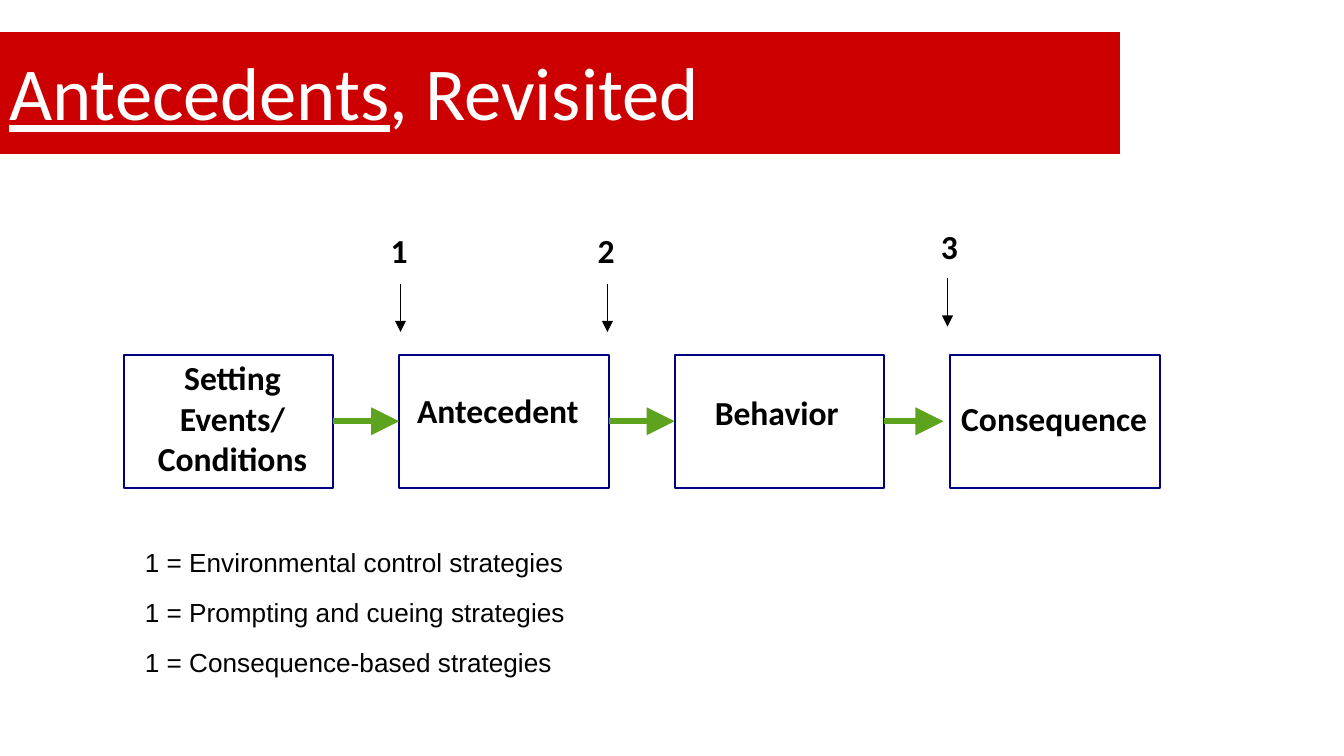
from pptx import Presentation
from pptx.dml.color import RGBColor
from pptx.enum.shapes import MSO_CONNECTOR, MSO_SHAPE
from pptx.enum.text import MSO_ANCHOR, PP_ALIGN
from pptx.oxml.ns import qn
from pptx.util import Inches, Pt
from lxml import etree

RECTANGLE = MSO_SHAPE.RECTANGLE
STRAIGHT = MSO_CONNECTOR.STRAIGHT
CENTER = PP_ALIGN.CENTER
LEFT = PP_ALIGN.LEFT
MIDDLE = MSO_ANCHOR.MIDDLE
RIGHT_SIDE, LEFT_SIDE = 3, 1


def color(value):
    return RGBColor.from_string(value)


def add_text(position, paragraphs, font_format, text_color="000000", align=LEFT):
    """Add a text box; each paragraph is a list of (text, underline) runs."""
    box = slide.shapes.add_textbox(*[Inches(value) for value in position])
    frame = box.text_frame
    frame.word_wrap = True
    for index, runs in enumerate(paragraphs):
        paragraph = frame.paragraphs[0] if index == 0 else frame.add_paragraph()
        paragraph.alignment = align
        for text, underline in runs:
            run = paragraph.add_run()
            run.text = text
            for name, value in font_format.items():
                setattr(run.font, name, value)
            run.font.underline = underline
            run.font.color.rgb = color(text_color)
    return box


# Widescreen slide, 16:9
presentation = Presentation()
presentation.slide_width = Inches(10)
presentation.slide_height = Inches(10 * 9 / 16)
slide = presentation.slides.add_slide(presentation.slide_layouts[6])

title_format = {"name": "Calibri", "size": Pt(40)}
label_format = {"name": "Calibri", "size": Pt(18), "bold": True}
legend_format = {"name": "Arial", "size": Pt(14)}

# Title band
band = slide.shapes.add_shape(
    RECTANGLE, Inches(-0.08), Inches(0.23), Inches(8.42), Inches(0.92))
band.shadow.inherit = False
band.fill.solid()
band.fill.fore_color.rgb = color("CC0000")
band.line.color.rgb = color("FFFFFF")
band.line.width = Pt(0.75)
title = add_text((-0.03, 0.27, 8.73, 0.81),
                 [[("Antecedents", True), (", Revisited", False)]],
                 title_format, "FFFFFF")
title.text_frame.vertical_anchor = MIDDLE

# Chain of boxes, evenly spaced, with their labels
box_left, box_top, box_width, box_height, box_step = 0.92, 2.64, 1.56, 0.99, 2.05
box_middle = box_top + box_height / 2
labels = [
    (["Setting Events/", "Conditions"], (0.98, 2.61, 1.5, 1)),
    (["Antecedent"], (2.87, 2.85, 1.67, 0.77)),
    (["Behavior"], (5.03, 2.87, 1.5, 0.77)),
    (["Consequence"], (6.93, 2.91, 1.83, 0.77)),
]
boxes = []
for index, (lines, position) in enumerate(labels):
    box = slide.shapes.add_shape(
        RECTANGLE, Inches(box_left + index * box_step), Inches(box_top),
        Inches(box_width), Inches(box_height))
    box.shadow.inherit = False
    box.fill.background()
    box.line.color.rgb = color("000080")
    box.line.width = Pt(1)
    boxes.append(box)
    add_text(position, [[(line, False)] for line in lines], label_format,
             align=CENTER)

# Green arrows between boxes; the last stops just short of its box
arrows = []
for index in range(len(boxes) - 1):
    arrow = slide.shapes.add_connector(
        STRAIGHT, Inches(0), Inches(box_middle), Inches(7.02), Inches(box_middle))
    arrow.begin_connect(boxes[index], RIGHT_SIDE)
    if index < 2:
        arrow.end_connect(boxes[index + 1], LEFT_SIDE)
    arrows.append((arrow, "5DA31E", 3, "lg"))

# Numbered markers with black arrows pointing down
markers = [
    ("1", (2.72, 1.66, 0.5, 0.44), 2.98, 2.11),
    ("2", (4.26, 1.66, 0.5, 0.44), 4.52, 2.11),
    ("3", (6.83, 1.63, 0.47, 0.44), 7.05, 2.07),
]
for number, position, x, top in markers:
    add_text(position, [[(number, False)]], label_format, align=CENTER)
    arrow = slide.shapes.add_connector(
        STRAIGHT, Inches(x), Inches(top), Inches(x), Inches(top + 0.36))
    arrows.append((arrow, "000000", 0.75, "med"))

# Arrow lines and heads
for arrow, line_color, width, head_size in arrows:
    arrow.line.color.rgb = color(line_color)
    arrow.line.width = Pt(width)
    etree.SubElement(arrow.line._get_or_add_ln(), qn("a:tailEnd"),
                     type="triangle", w=head_size, len=head_size)
    etree.SubElement(arrow._element.spPr, qn("a:effectLst"))

# Legend
legend = ["Environmental control", "Prompting and cueing", "Consequence-based"]
for index, strategy in enumerate(legend):
    add_text((0.98, 4.02 + index * 0.37, 3.94, 0.34),
             [[(f"1 = {strategy} strategies", False)]], legend_format)

presentation.save("out.pptx")
